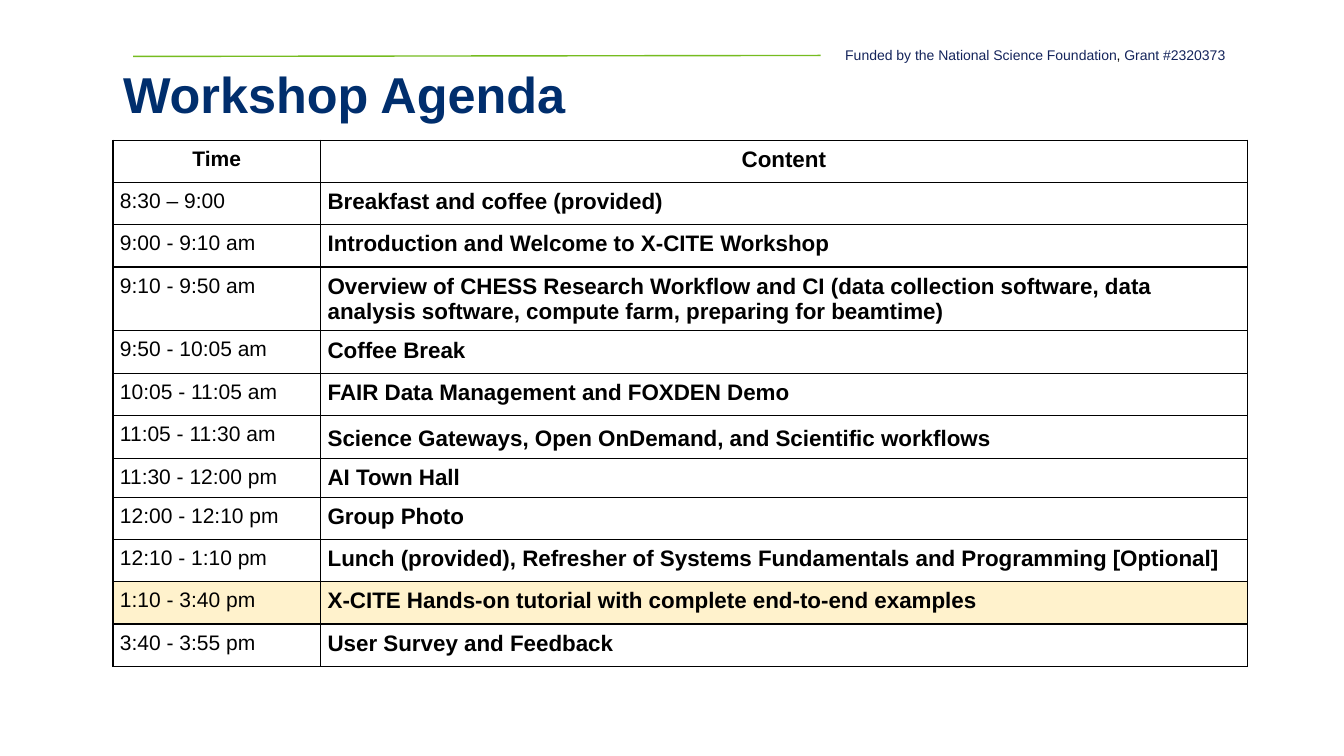
"""Build the workshop agenda slide."""
from dataclasses import dataclass

from lxml.etree import SubElement
from pptx import Presentation
from pptx.dml.color import RGBColor as Rgb
from pptx.enum.shapes import MSO_CONNECTOR as Link
from pptx.enum.text import MSO_ANCHOR as Anchor, MSO_AUTO_SIZE as Fit, PP_ALIGN as Align
from pptx.oxml import parse_xml
from pptx.oxml.ns import nsdecls, qn
from pptx.util import Emu, Pt

BLACK, NAVY, INK, GREEN, CREAM = "000000", "002E6D", "14245B", "76BC20", "FFF2CC"
ROW = 42


@dataclass(frozen=True)
class Slot:
    time: str
    topic: str
    height: int = ROW
    fill: str = ""
    space: float = 1.0


SLOTS = [
    Slot("Time", "Content"),
    Slot("8:30 – 9:00", "Breakfast and coffee (provided)"),
    Slot("9:00 - 9:10 am", "Introduction and Welcome to X-CITE Workshop"),
    Slot("9:10 - 9:50 am", "Overview of CHESS Research Workflow and CI (data collection "
         "software, data analysis software, compute farm, preparing for beamtime)", height=63),
    Slot("9:50 - 10:05 am", "Coffee Break"),
    Slot("10:05 - 11:05 am", "FAIR Data Management and FOXDEN Demo"),
    Slot("11:05 - 11:30 am", "Science Gateways, Open OnDemand, and Scientific workflows",
         space=1.15),
    Slot("11:30 - 12:00 pm", "AI Town Hall", height=38),
    Slot("12:00 - 12:10 pm", "Group Photo"),
    Slot("12:10 - 1:10 pm", "Lunch (provided), Refresher of Systems Fundamentals and "
         "Programming [Optional]"),
    Slot("1:10 - 3:40 pm", "X-CITE Hands-on tutorial with complete end-to-end examples",
         fill=CREAM),
    Slot("3:40 - 3:55 pm", "User Survey and Feedback"),
]


def px(size: int) -> Emu:
    return Emu(size * 9144)


def tint(code: str) -> Rgb:
    return Rgb.from_string(code)


def add_run(para, text: str, size: int, color: str, bold: bool = False) -> None:
    run = para.add_run()
    run.text = text
    font = run.font
    font.name, font.size, font.bold = "Arial", Pt(size), bold
    font.color.rgb = tint(color)


def set_frame(frame) -> None:
    frame.word_wrap = True
    frame.auto_size = Fit.NONE
    frame.margin_left = frame.margin_right = px(10)
    frame.margin_top = frame.margin_bottom = px(5)


def add_rule(slide) -> None:
    rule = slide.shapes.add_connector(Link.STRAIGHT, px(132), px(56), px(814), px(55))
    rule.line.color.rgb = tint(GREEN)
    rule.line.width = Pt(1)
    SubElement(rule._element.spPr, qn("a:effectLst"))


def add_grant(slide) -> None:
    frame = slide.shapes.add_textbox(px(653), px(41), px(572), px(27)).text_frame
    set_frame(frame)
    para = frame.paragraphs[0]
    para.alignment = Align.RIGHT
    add_run(para, "Funded by the National Science Foundation", 10, INK)
    add_run(para, ", ", 10, BLACK)
    add_run(para, "Grant #2320373", 10, INK)


def set_title(slide) -> None:
    title = slide.shapes.title
    title.left, title.top, title.width, title.height = map(px, (112, 55, 1150, 83))
    frame = title.text_frame
    set_frame(frame)
    frame.vertical_anchor = Anchor.MIDDLE
    para = frame.paragraphs[0]
    para.alignment, para.line_spacing = Align.LEFT, 0.9
    add_run(para, "Workshop Agenda", 36, NAVY, True)


def add_edges(cell) -> None:
    props = cell._tc.get_or_add_tcPr()
    for side in "LRTB":
        props.append(parse_xml(
            f'<a:ln{side} {nsdecls("a")} w="12700"><a:solidFill>'
            f'<a:srgbClr val="{BLACK}"/></a:solidFill></a:ln{side}>'))


def fill_cell(cell, text: str, size: int, bold: bool, align: Align, slot: Slot) -> None:
    cell.margin_left = cell.margin_right = cell.margin_top = cell.margin_bottom = px(7)
    cell.vertical_anchor = Anchor.TOP
    add_edges(cell)
    if slot.fill:
        cell.fill.solid()
        cell.fill.fore_color.rgb = tint(slot.fill)
    else:
        cell.fill.background()
    para = cell.text_frame.paragraphs[0]
    para.alignment = align
    add_run(para, text, size, BLACK, bold)


def add_agenda(slide) -> None:
    total = sum(slot.height for slot in SLOTS)
    table = slide.shapes.add_table(
        len(SLOTS), 2, px(112), px(139), px(1125), px(total)).table
    table.first_row = table.horz_banding = False
    for col, width in zip(table.columns, (206, 919)):
        col.width = px(width)
    for index, slot in enumerate(SLOTS):
        head = index == 0
        align = Align.CENTER if head else Align.LEFT
        table.rows[index].height = px(slot.height)
        time, topic = table.cell(index, 0), table.cell(index, 1)
        fill_cell(time, slot.time, 15, head, align, slot)
        fill_cell(topic, slot.topic, 16, True, align, slot)
        if slot.space != 1:
            topic.text_frame.paragraphs[0].line_spacing = slot.space


def main() -> None:
    deck = Presentation()
    deck.slide_width, deck.slide_height = px(1333), px(750)
    slide = deck.slides.add_slide(deck.slide_layouts[5])
    add_rule(slide)
    add_grant(slide)
    set_title(slide)
    add_agenda(slide)
    deck.save("out.pptx")


if __name__ == "__main__":
    main()
